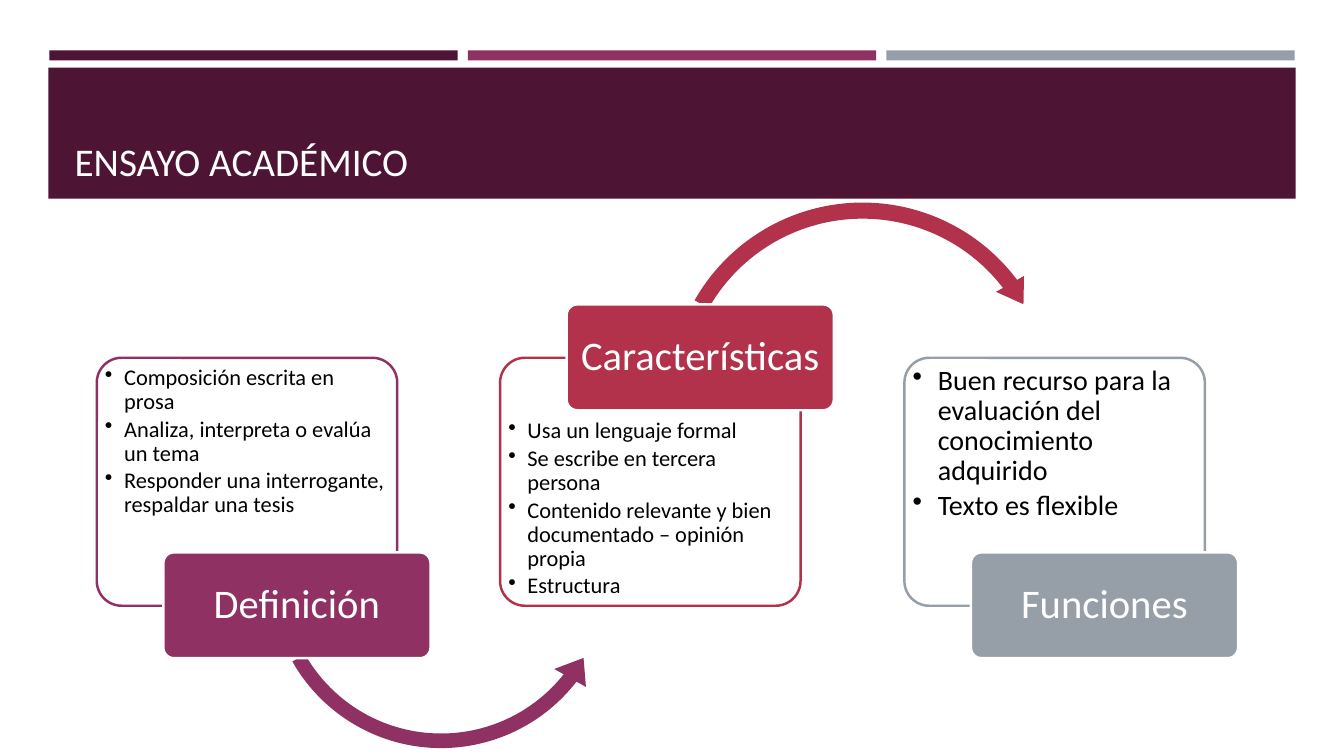
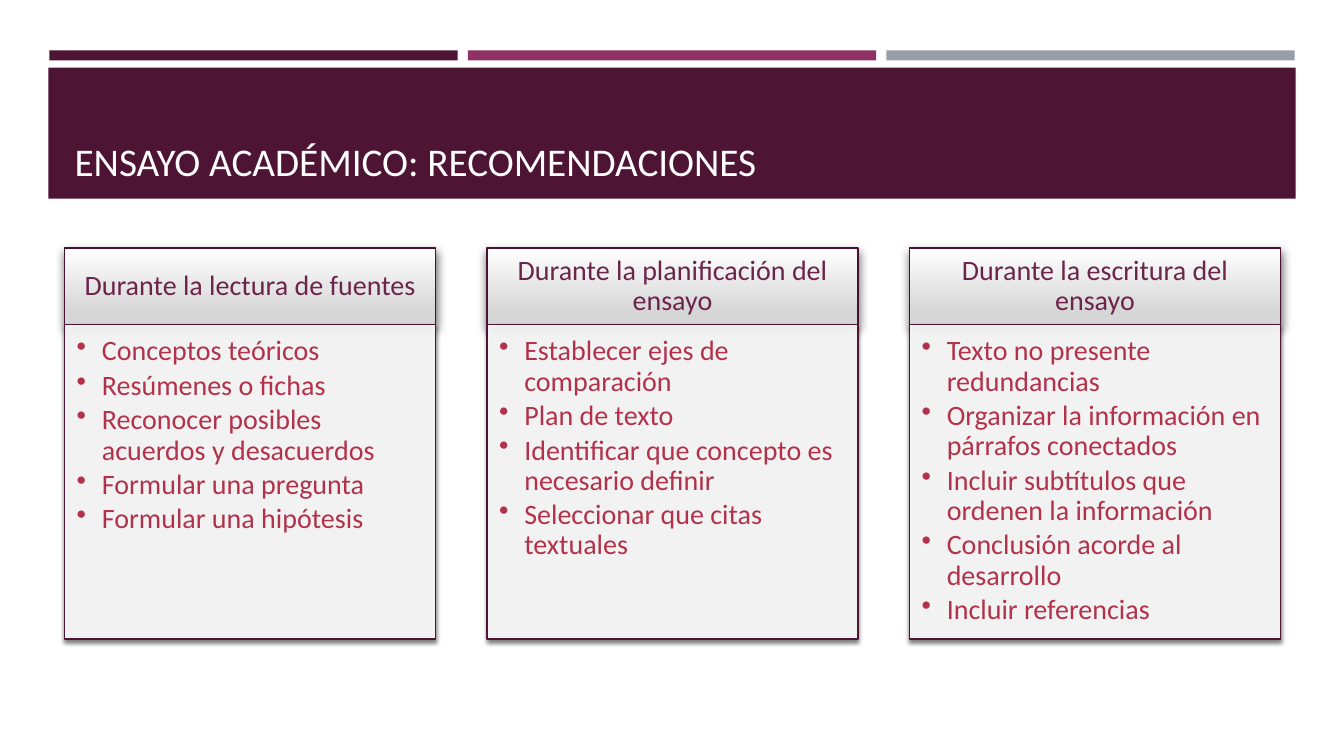
from lxml import etree
from pptx import Presentation, util as u
from pptx.dml.color import RGBColor
from pptx.enum import shapes, text
from pptx.oxml.ns import qn

PX = 9144  # 100 px to the inch
FONT = "Calibri"
WHITE, BLACK = "FFFFFF", "000000"
WINE, PLUM, GREY, RED = "4D1434", "903163", "969FA7", "B2324B"
HEADER_LINE, HEADER_TEXT = "46122F", "6C254A"
HEADER_GRADIENT = [(0, WHITE), (0.84, "D6D6D6")]

SHAPE = shapes.MSO_SHAPE
ANCHOR, ALIGN = text.MSO_ANCHOR, text.PP_ALIGN

ESSAY_TITLE = "ENSAYO ACADÉMICO"
ESSAY_PARTS = [
    dict(label="Definición", color=PLUM, size=16, label_on_top=False,
         points=["Composición escrita en prosa",
                 "Analiza, interpreta o evalúa un tema",
                 "Responder una interrogante, respaldar una tesis"],
         arrow=(SHAPE.LEFT_CIRCULAR_ARROW, (257, 392, 361, 361),
                (0.04, 5.06, 22.82, 90.25, 0.05))),
    dict(label="Características", color=RED, size=16, label_on_top=True,
         points=["Usa un lenguaje formal",
                 "Se escribe en tercera persona",
                 "Contenido relevante y bien documentado – opinión propia",
                 "Estructura"],
         arrow=(SHAPE.CIRCULAR_ARROW, (656, 193, 399, 399),
                (0.04, 4.53, 193.71, 125.76, 0.04))),
    dict(label="Funciones", color=GREY, size=20, label_on_top=False,
         points=["Buen recurso para la evaluación del conocimiento adquirido",
                 "Texto es flexible"],
         arrow=None),
]

ADVICE_TITLE = "ENSAYO ACADÉMICO: RECOMENDACIONES"
ADVICE = [
    ("Durante la lectura de fuentes",
     ["Conceptos teóricos", "Resúmenes o fichas",
      "Reconocer posibles acuerdos y desacuerdos",
      "Formular una pregunta", "Formular una hipótesis"]),
    ("Durante la planificación del ensayo",
     ["Establecer ejes de comparación", "Plan de texto",
      "Identificar que concepto es necesario definir",
      "Seleccionar que citas textuales"]),
    ("Durante la escritura del ensayo",
     ["Texto no presente redundancias",
      "Organizar la información en párrafos conectados",
      "Incluir subtítulos que ordenen la información",
      "Conclusión acorde al desarrollo", "Incluir referencias"]),
]


def px(*lengths):
    return [u.Emu(length * PX) for length in lengths]


def rgb(color):
    return RGBColor.from_string(color)


def add_block(slide, kind, box, fill=None, line=None, width=1, adjust=()):
    block = slide.shapes.add_shape(kind, *px(*box))
    block.shadow.inherit = False
    if fill:
        block.fill.solid()
        block.fill.fore_color.rgb = rgb(fill)
    if line:
        block.line.color.rgb = rgb(line)
        block.line.width = u.Pt(width)
    else:
        block.line.fill.background()
    for i, value in enumerate(adjust):
        block.adjustments[i] = value
    return block


def write(shape, lines, size, color, insets, anchor=ANCHOR.MIDDLE,
          align=ALIGN.CENTER, spacing=0.9, indent=0):
    """Fill a shape with paragraphs; a positive indent makes them bullets."""
    frame = shape.text_frame
    frame.word_wrap = True
    frame.auto_size = text.MSO_AUTO_SIZE.NONE
    frame.vertical_anchor = anchor
    (frame.margin_left, frame.margin_top,
     frame.margin_right, frame.margin_bottom) = px(*insets)
    for i, line in enumerate(lines):
        paragraph = frame.paragraphs[0] if i == 0 else frame.add_paragraph()
        paragraph.text = line
        paragraph.alignment = align
        paragraph.line_spacing = spacing
        font = paragraph.font
        font.name, font.size, font.color.rgb = FONT, u.Pt(size), rgb(color)
        if indent:
            paragraph.space_after = u.Pt(0.15 * size)
            props = paragraph.font._element.getparent()
            props.set("marL", str(indent * PX))
            props.set("indent", str(-indent * PX))
            bullet = etree.Element(qn("a:buChar"), char="•")
            props.find(qn("a:defRPr")).addprevious(bullet)


def add_alpha(color_element, percent):
    etree.SubElement(color_element, qn("a:alpha"), val=str(percent * 1000))


def cast_shadow(shape, alpha, blur, distance, angle):
    effects = shape.element.spPr.find(qn("a:effectLst"))
    shadow = etree.SubElement(
        effects, qn("a:outerShdw"), blurRad=str(u.Pt(blur)),
        dist=str(u.Pt(distance)), dir=str(angle * 60000), rotWithShape="0")
    add_alpha(etree.SubElement(shadow, qn("a:srgbClr"), val=BLACK), alpha)


def add_titled_slide(deck, layout, title):
    slide = deck.slides.add_slide(layout)
    heading = slide.shapes.title
    heading.left, heading.top, heading.width, heading.height = px(64, 77, 1206, 111)
    write(heading, [title], 28, WHITE, (10, 5, 10, 5), ANCHOR.BOTTOM, ALIGN.LEFT, 1)
    return slide


def move_bands_to_layout(slide, layout):
    """Draw the header bands and hand them to the layout that all slides share."""
    for placeholder in list(layout.placeholders):
        if placeholder.placeholder_format.idx:
            placeholder.element.getparent().remove(placeholder.element)
    bands = [((49 + 415 * i, 50, 405, 10), color)
             for i, color in enumerate((WINE, PLUM, GREY))]
    bands.append(((48, 67, 1237, 130), WINE))
    for box, color in bands:
        band = add_block(slide, SHAPE.RECTANGLE, box, color)
        layout.shapes.element.insert(2, band.element)


def draw_essay_parts(slide):
    for i, part in enumerate(ESSAY_PARTS):
        left, color, on_top = 96 + 801 * i // 2, part["color"], part["label_on_top"]
        panel = add_block(slide, SHAPE.ROUNDED_RECTANGLE, (left, 355, 298, 246),
                          WHITE, color, 1.75, [0.1])
        write(panel, part["points"], part["size"], BLACK,
              (1, 54 if on_top else 1, 2, 1), ANCHOR.TOP, ALIGN.LEFT,
              indent=19 if part["size"] == 16 else 25)
        if part["arrow"]:
            kind, box, adjust = part["arrow"]
            add_block(slide, kind, box, color, adjust=adjust)
        label = add_block(slide, SHAPE.ROUNDED_RECTANGLE,
                          (left + 66, 302 if on_top else 548, 265, 105),
                          color, WHITE, 1.75, [0.1])
        write(label, [part["label"]], 29, WHITE, (5, 4, 5, 4))


def draw_advice(slide):
    for i, (stage, tips) in enumerate(ADVICE):
        left = 64 + 419 * i
        header = add_block(slide, SHAPE.RECTANGLE, (left, 246, 368, 76),
                           line=HEADER_LINE)
        header.fill.gradient()
        header.fill.gradient_angle = 270
        for stop, (position, color) in zip(header.fill.gradient_stops, HEADER_GRADIENT):
            stop.position, stop.color.rgb = position, rgb(color)
        cast_shadow(header, 60, 7, 3, 84)
        write(header, [stage], 20, HEADER_TEXT, (16, 9, 16, 9))

        card = add_block(slide, SHAPE.RECTANGLE, (left, 322, 368, 312), WHITE, WINE)
        add_alpha(card.element.spPr.find(qn("a:solidFill"))[0], 90)
        cast_shadow(card, 55, 3, 2, 90)
        write(card, tips, 20, RED, (12, 12, 16, 17), ANCHOR.TOP, ALIGN.LEFT, indent=25)


def main():
    deck = Presentation()
    deck.slide_width, deck.slide_height = px(1333, 750)
    layout = deck.slide_layouts[5]
    essay = add_titled_slide(deck, layout, ESSAY_TITLE)
    move_bands_to_layout(essay, layout)
    draw_essay_parts(essay)
    draw_advice(add_titled_slide(deck, layout, ADVICE_TITLE))
    deck.save("out.pptx")


if __name__ == "__main__":
    main()
